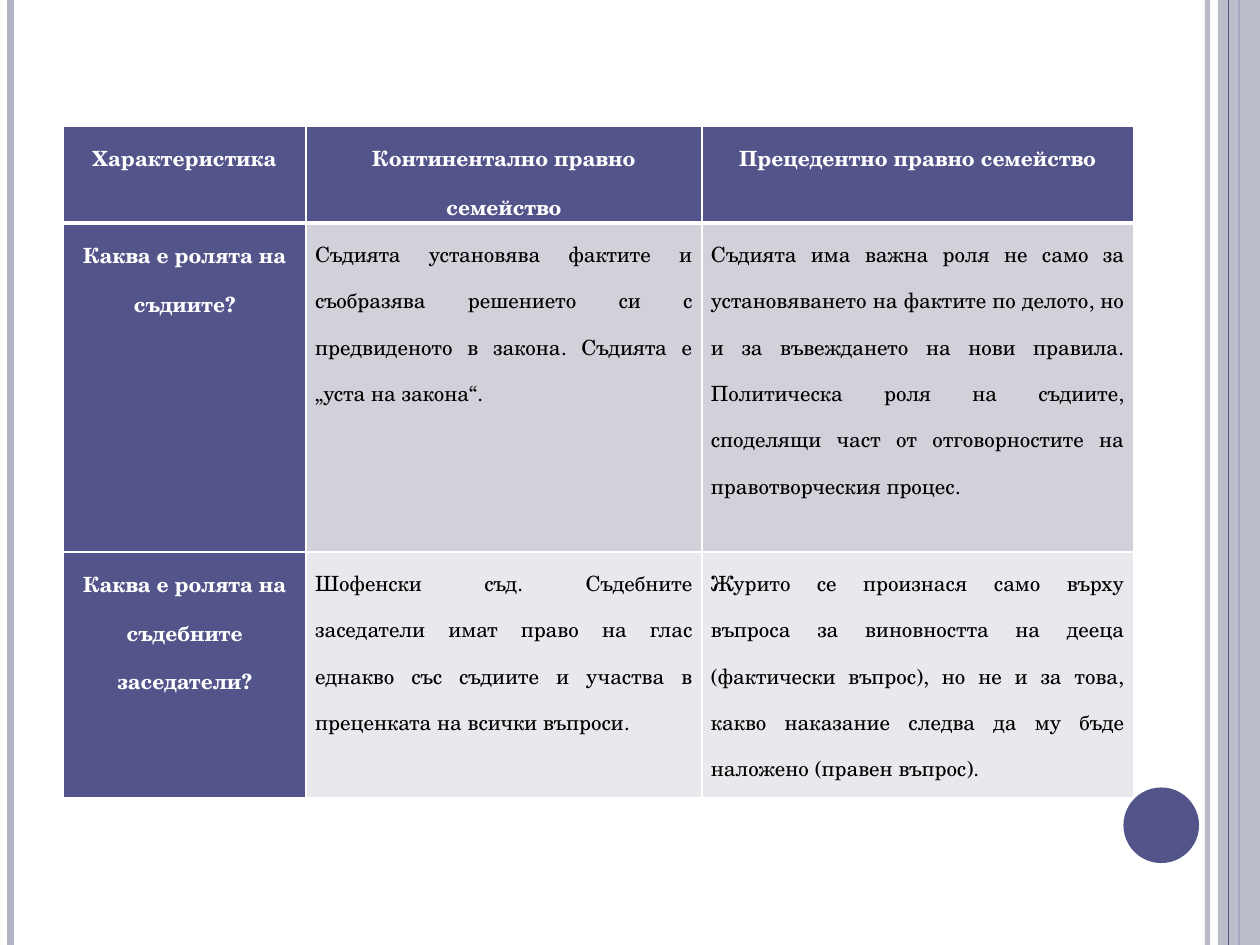
"""Build a slide comparing judges and jurors in two legal families."""
from lxml import etree
from pptx import Presentation
from pptx.dml.color import RGBColor
from pptx.enum import shapes, text
from pptx.oxml import ns
from pptx.util import Pt

C = {"white": "FFFFFF", "black": "000000", "indigo": "53548A",
     "grey": "B3B4C4", "band1": "D1D1DA", "band2": "E9E9ED"}
FONT = "TeX Gyre Schola"


def paint(fill, color, alpha=100):
    fill.solid()
    fill.fore_color.rgb = RGBColor.from_string(C[color])
    if alpha < 100:
        clr = fill._xPr.find(".//" + ns.qn("a:srgbClr"))
        etree.SubElement(clr, ns.qn("a:alpha"), val=str(alpha * 1000))


def border(cell, side, width):
    tcPr = cell._tc.get_or_add_tcPr()
    ln = etree.SubElement(tcPr, ns.qn("a:ln" + side), w=str(Pt(width)))
    solid = etree.SubElement(ln, ns.qn("a:solidFill"))
    etree.SubElement(solid, ns.qn("a:srgbClr"), val=C["white"])


prs = Presentation()
prs.slide_width, prs.slide_height = Pt(720), Pt(540)
s = prs.slides.add_slide(prs.slide_layouts[6])

bars = [("line", 690, 3, "grey", 93), ("line", 6, 4.5, "grey", 100),
        ("line", 708, 1.5, "indigo", 100), ("rect", 696, 24, "grey", 87),
        ("line", 702, 0.75, "indigo", 100)]
for kind, x, width, color, alpha in bars:
    if kind == "line":
        sp = s.shapes.add_connector(shapes.MSO_CONNECTOR.STRAIGHT, Pt(x), 0, Pt(x), Pt(540))
        sp.line.width = Pt(width)
        paint(sp.line.fill, color, alpha)
        etree.SubElement(sp._element.spPr, ns.qn("a:effectLst"))
    else:
        sp = s.shapes.add_shape(shapes.MSO_SHAPE.RECTANGLE, Pt(x), 0, Pt(width), Pt(540))
        sp.shadow.inherit = False
        sp.line.fill.background()
        paint(sp.fill, color, alpha)

dot = s.shapes.add_shape(shapes.MSO_SHAPE.OVAL, Pt(642), Pt(450), Pt(43.2), Pt(43.2))
dot.shadow.inherit = False
dot.line.fill.background()
paint(dot.fill, "indigo")

rows = [
    ("Характеристика", "Континентално правно семейство", "Прецедентно правно семейство"),
    ("Каква е ролята на съдиите?",
     "Съдията установява фактите и съобразява решението си с предвиденото в закона. "
     "Съдията е „уста на закона“.",
     "Съдията има важна роля не само за установяването на фактите по делото, но и за "
     "въвеждането на нови правила. Политическа роля на съдиите, споделящи част от "
     "отговорностите на правотворческия процес."),
    ("Каква е ролята на съдебните заседатели?",
     "Шофенски съд. Съдебните заседатели имат право на глас еднакво със съдиите и "
     "участва в преценката на всички въпроси.",
     "Журито се произнася само върху въпроса за виновността на дееца (фактически въпрос), "
     "но не и за това, какво наказание следва да му бъде наложено (правен въпрос)."),
]
col_widths = [138.6, 226.2, 246.8]
row_heights = [45, 188, 140.6]
tbl = s.shapes.add_table(3, 3, Pt(36.3), Pt(72), Pt(sum(col_widths)), Pt(sum(row_heights))).table
for col, width in zip(tbl.columns, col_widths):
    col.width = Pt(width)
for row, height in zip(tbl.rows, row_heights):
    row.height = Pt(height)

for i, row in enumerate(rows):
    for j, words in enumerate(row):
        cell = tbl.cell(i, j)
        head = i == 0 or j == 0
        cell.margin_left = cell.margin_right = Pt(5.2)
        cell.margin_top = cell.margin_bottom = 0
        for side in "LRTB":
            heavy = (i, side) in [(0, "B"), (1, "T")]
            border(cell, side, 3 if heavy else 1)
        paint(cell.fill, "indigo" if head else f"band{i}")
        cell.text = words
        p = cell.text_frame.paragraphs[0]
        p.alignment = text.PP_ALIGN.CENTER if head else text.PP_ALIGN.JUSTIFY
        p.line_spacing = 1.5
        p.font.name, p.font.size, p.font.bold = FONT, Pt(12), head
        p.font.color.rgb = RGBColor.from_string(C["white" if head else "black"])

prs.save("out.pptx")
